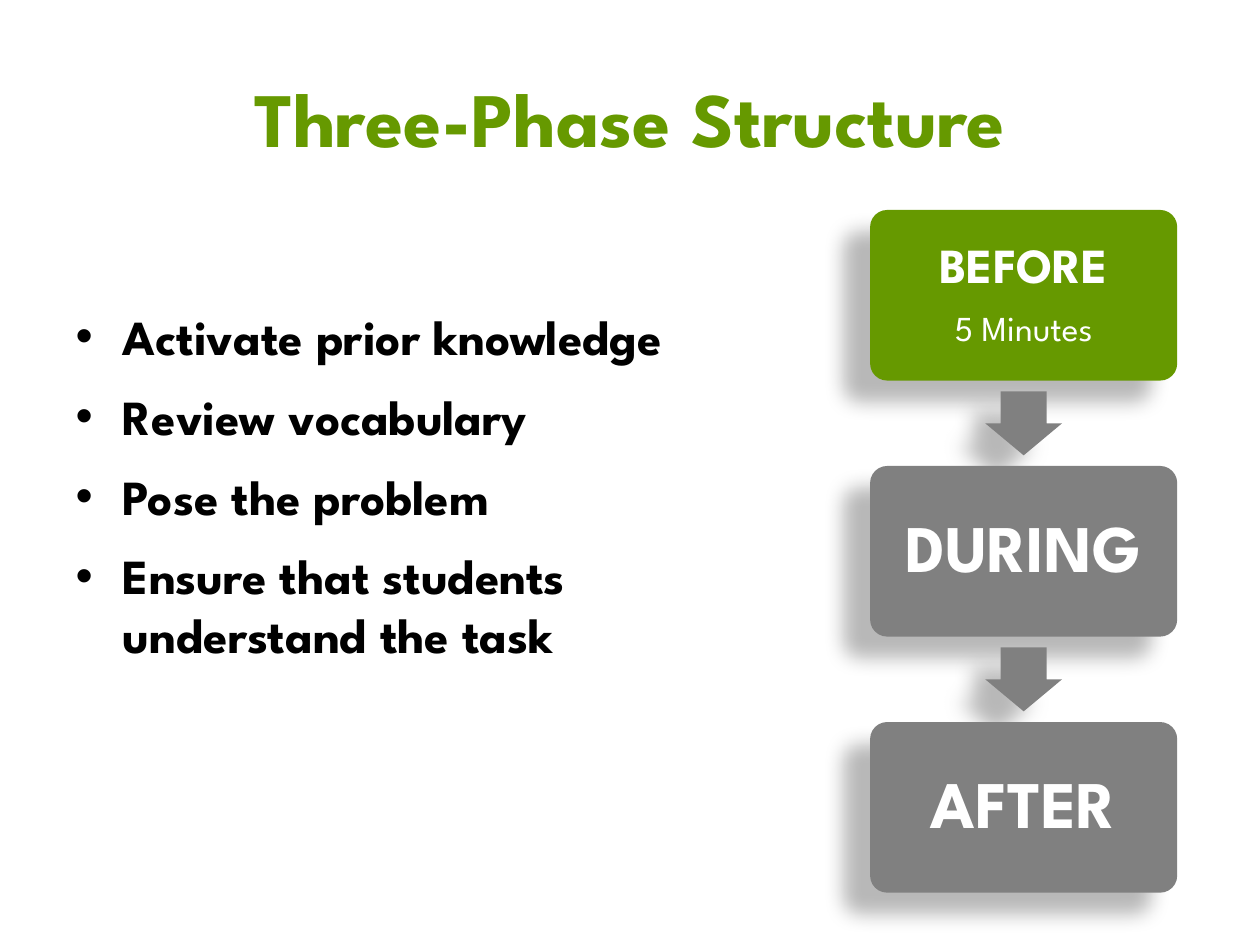
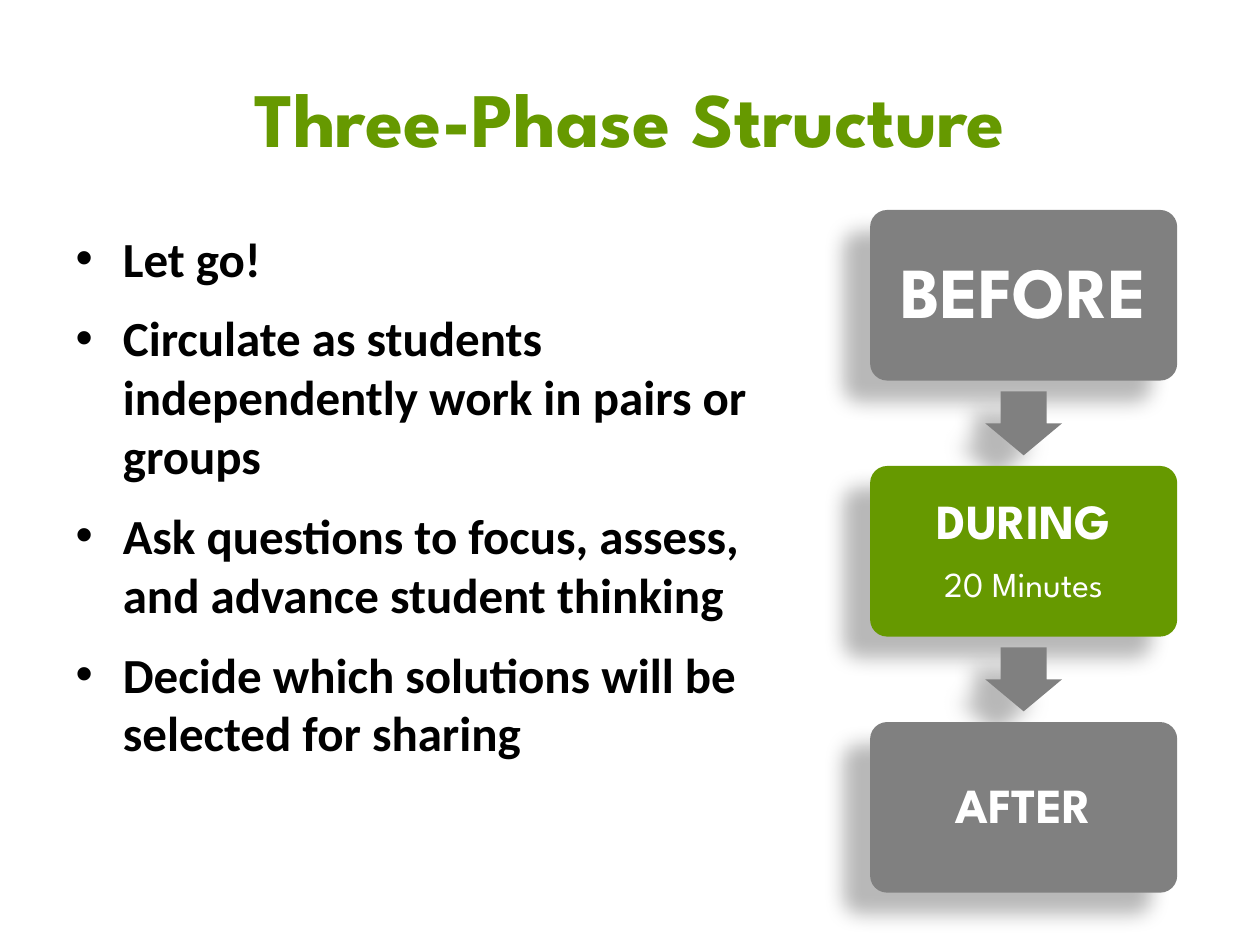
from pptx import Presentation
from pptx.dml.color import RGBColor
from pptx.enum import shapes, text
from pptx.oxml import parse_xml
from pptx.oxml.ns import nsdecls
from pptx.util import Pt

TITLE = "Three-Phase Structure"
HEADING_FONT = "League Spartan"
COLORS = {"current": "669900", "other": "808080", "body": "000000", "label": "FFFFFF"}

# Each phase: name, name size, duration (only the current phase has one)
SLIDES = [
    {
        "points": [
            "Activate prior knowledge",
            "Review vocabulary",
            "Pose the problem",
            "Ensure that students understand the task",
        ],
        "font": HEADING_FONT,
        "box": (36, 171.4, 401.8, 311),
        "phases": [("BEFORE", 28, "5 Minutes"), ("DURING", 38, None), ("AFTER", 38, None)],
    },
    {
        "points": [
            "Let go!",
            "Circulate as students independently work in pairs or groups",
            "Ask questions to focus, assess, and advance student thinking",
            "Decide which solutions will be selected for sharing",
        ],
        "font": "Calibri",
        "box": (36, 126.7, 414, 311),
        "phases": [("BEFORE", 41, None), ("DURING", 28, "20 Minutes"), ("AFTER", 28, None)],
    },
]

TITLE_BOX = (36, 21.6, 648, 90)
CARD_LEFT, CARD_TOP, CARD_WIDTH, CARD_HEIGHT = 497.2, 120, 175.5, 97.5
CARD_PITCH = 146.3
CARD_INSET = 8
ARROW_LENGTH, ARROW_BREADTH = 36.6, 43.9
DURATION_SIZE = 20


def color(role):
    return RGBColor.from_string(COLORS[role])


def place(shape, box):
    shape.left, shape.top, shape.width, shape.height = map(Pt, box)


def style(paragraph, size, font, role, bold=True):
    paragraph.font.size = Pt(size)
    paragraph.font.name = font
    paragraph.font.bold = bold
    paragraph.font.color.rgb = color(role)


def add_shadowed(slide, kind, box, role):
    """Add a borderless filled shape with a soft shadow to its lower left."""
    shape = slide.shapes.add_shape(kind, *map(Pt, box))
    shape.fill.solid()
    shape.fill.fore_color.rgb = color(role)
    shape.line.fill.background()
    shape.shadow.inherit = False
    effects = shape._element.spPr.find("{*}effectLst")
    effects.append(parse_xml(
        f'<a:outerShdw {nsdecls("a")} blurRad="{Pt(11.8)}" dist="{Pt(19.7)}" '
        f'dir="{141 * 60000}" algn="ctr" rotWithShape="0">'
        '<a:srgbClr val="000000"><a:alpha val="28000"/></a:srgbClr></a:outerShdw>'))
    return shape


def add_card(slide, top, name, size, duration):
    card = add_shadowed(slide, shapes.MSO_SHAPE.ROUNDED_RECTANGLE,
                        (CARD_LEFT, top, CARD_WIDTH, CARD_HEIGHT),
                        "current" if duration else "other")
    card.adjustments[0] = 0.1
    frame = card.text_frame
    frame.word_wrap = True
    frame.vertical_anchor = text.MSO_ANCHOR.MIDDLE
    frame.margin_left = frame.margin_right = Pt(CARD_INSET)
    frame.margin_top = frame.margin_bottom = Pt(CARD_INSET)
    lines = [(name, size, True)]
    if duration:
        lines.append((duration, DURATION_SIZE, False))
    frame.text = "\n".join(line[0] for line in lines)
    for paragraph, (_, line_size, bold) in zip(frame.paragraphs, lines):
        paragraph.alignment = text.PP_ALIGN.CENTER
        paragraph.line_spacing = 0.9
        paragraph.space_after = Pt(0.35 * line_size)
        style(paragraph, line_size, HEADING_FONT, "label", bold)


def add_arrow(slide, middle):
    """Add a downward arrow centred on the cards at the given height."""
    center = CARD_LEFT + CARD_WIDTH / 2
    arrow = add_shadowed(slide, shapes.MSO_SHAPE.RIGHT_ARROW,
                         (center - ARROW_LENGTH / 2, middle - ARROW_BREADTH / 2,
                          ARROW_LENGTH, ARROW_BREADTH), "other")
    arrow.rotation = 90
    arrow.adjustments[0], arrow.adjustments[1] = 0.6, 0.5


def add_phases(slide, phases):
    for index, phase in enumerate(phases):
        top = CARD_TOP + index * CARD_PITCH
        if index:
            add_arrow(slide, top - (CARD_PITCH - CARD_HEIGHT) / 2)
        add_card(slide, top, *phase)


def add_title(slide):
    title = slide.shapes.title
    place(title, TITLE_BOX)
    title.text_frame.text = TITLE
    style(title.text_frame.paragraphs[0], 44, HEADING_FONT, "current")


def add_points(slide, points, font, box):
    body = slide.placeholders[1]
    place(body, box)
    frame = body.text_frame
    frame.auto_size = text.MSO_AUTO_SIZE.NONE
    frame.text = "\n".join(points)
    for index, paragraph in enumerate(frame.paragraphs):
        paragraph.space_before = Pt(6 if index else 0)
        paragraph.space_after = Pt(6)
        style(paragraph, 28, font, "body")


def main():
    deck = Presentation()
    deck.slide_width, deck.slide_height = Pt(720), Pt(540)
    for content in SLIDES:
        slide = deck.slides.add_slide(deck.slide_layouts[1])
        add_title(slide)
        add_points(slide, content["points"], content["font"], content["box"])
        add_phases(slide, content["phases"])
    deck.save("out.pptx")


if __name__ == "__main__":
    main()
